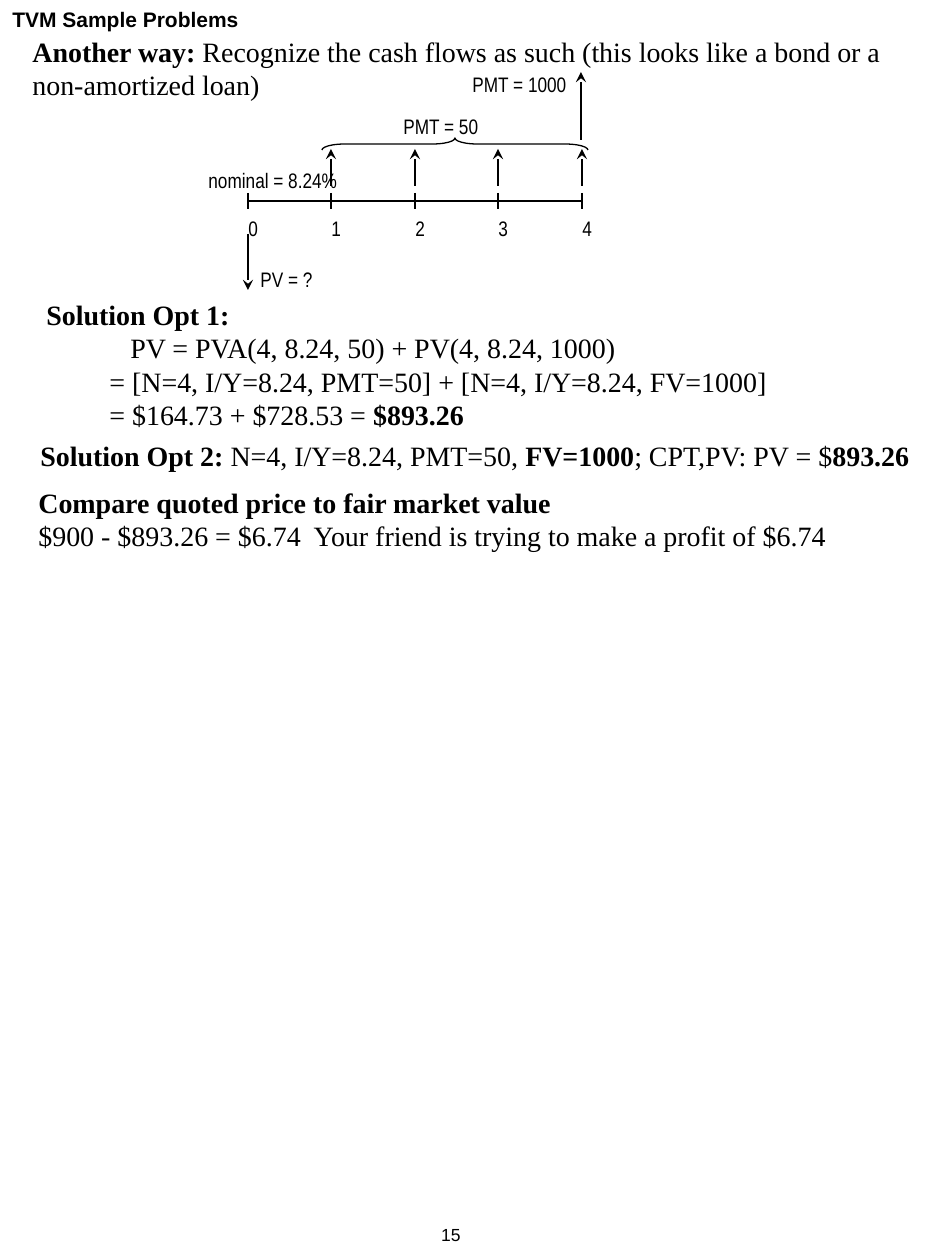
from lxml import etree
from pptx import Presentation
from pptx.dml.color import RGBColor
from pptx.enum import shapes, text
from pptx.oxml.ns import qn
from pptx import util as u

PX = 914400 / 126
INK = "000000"


def px(length):
    return u.Emu(round(length * PX))


def color(hex_value):
    return RGBColor.from_string(hex_value)


class Sheet:
    serif, narrow, sans = "Times New Roman", "Arial Narrow", "Arial"

    def __init__(self, slide):
        self.slide = slide
        self.target = slide.shapes

    def start_group(self):
        self.target = self.slide.shapes.add_group_shape().shapes

    def end_group(self):
        self.target = self.slide.shapes

    def add_text(self, box, paragraphs, font=serif, size=16, wrap=True, align=None):
        """Each paragraph is a list of (words, bold) pairs."""
        frame = self.target.add_textbox(*map(px, box)).text_frame
        frame.word_wrap = wrap
        frame.auto_size = text.MSO_AUTO_SIZE.NONE
        for number, pieces in enumerate(paragraphs):
            line = frame.add_paragraph() if number else frame.paragraphs[0]
            line.alignment = align
            for words, bold in pieces:
                run = line.add_run()
                run.text = words
                run.font.name = font
                run.font.size = u.Pt(size)
                run.font.bold = bold
                run.font.color.rgb = color(INK)
        return frame

    def label(self, x, y, width, words):
        self.add_text((x, y, width, 38), [[(words, False)]], self.narrow, 12, wrap=False)

    def line(self, x1, y1, x2, y2, weight=0.75):
        rule = self.target.add_connector(
            shapes.MSO_CONNECTOR.STRAIGHT, *map(px, (x1, y1, x2, y2)))
        rule.line.color.rgb = color(INK)
        rule.line.width = u.Pt(weight)
        etree.SubElement(rule._element.spPr, qn("a:effectLst"))
        return rule

    def arrow(self, x, start, end):
        stem = self.line(x, start, x, end, 1.5)
        outline = stem._element.spPr.find(qn("a:ln"))
        etree.SubElement(outline, qn("a:tailEnd"), type="stealth")

    def brace(self, x, y, width, height):
        """Horizontal brace pointing up: an upright one turned on its centre."""
        left, top = x + (width - height) / 2, y + (height - width) / 2
        curve = self.target.add_shape(
            shapes.MSO_SHAPE.RIGHT_BRACE, *map(px, (left, top, height, width)))
        curve.rotation = 270
        curve.adjustments[0] = 1.875
        curve.fill.background()
        curve.line.color.rgb = color(INK)
        curve.line.width = u.Pt(0.75)
        curve.shadow.inherit = False


deck = Presentation()
deck.slide_width, deck.slide_height = px(945), px(1260)
sheet = Sheet(deck.slides.add_slide(deck.slide_layouts[6]))

# Page number
sheet.add_text((410, 1218, 63, 42), [[("15", False)]], sheet.sans, 10,
               align=text.PP_ALIGN.RIGHT)

# Cash flow timeline
periods = [248 + 334 * n // 4 for n in range(5)]
first, last = periods[0], periods[-1]
sheet.start_group()
sheet.line(first, 201, last, 201)
for period, x in enumerate(periods):
    sheet.line(x, 193, x, 209)
    sheet.label(x - 12, 209, 35, str(period))
    if period:
        sheet.arrow(x, 186, 149)
sheet.arrow(last - 1, 140, 72)
sheet.arrow(first, 234, 290)
sheet.brace(322, 138, 266, 12)
sheet.label(391, 107, 100, "PMT = 50")
sheet.label(248, 260, 78, "PV = ?")
sheet.label(196, 161, 156, "nominal = 8.24%")
sheet.label(460, 65, 120, "PMT = 1000")
sheet.end_group()

# Problem statement
sheet.add_text((20, 28, 925, 81), [[
    ("Another way:", True),
    (" Recognize the cash flows as such (this looks like a bond or a "
     "non-amortized loan)", False)]])

# First solution, equals signs aligned on the tab stop
working = sheet.add_text((34, 291, 911, 149), [
    [("Solution Opt 1:", True)],
    [("PV\t= PVA(4, 8.24, 50) + PV(4, 8.24, 1000)", False)],
    [("\t= [N=4, I/Y=8.24, PMT=50] + [N=4, I/Y=8.24, FV=1000]", False)],
    [("\t= $164.73 + $728.53 = ", False), ("$893.26", True)]])
working.paragraphs[1]._p.get_or_add_pPr().set("indent", str(px(84)))

# Second solution
sheet.add_text((28, 432, 901, 47), [[
    ("Solution Opt 2: ", True), ("N=4, I/Y=8.24, PMT=50, ", False),
    ("FV=1000", True), ("; CPT,PV: PV = $", False), ("893.26", True)]], wrap=False)

# Conclusion
sheet.add_text((26, 479, 824, 81), [
    [("Compare quoted price to fair market value", True)],
    [("$900 - $893.26 = $6.74  Your friend is trying to make a profit of $6.74", False)],
], wrap=False)

# Heading
sheet.add_text((0, 0, 410, 32), [[("TVM Sample Problems", True)]], sheet.sans, 12)

deck.save("out.pptx")
